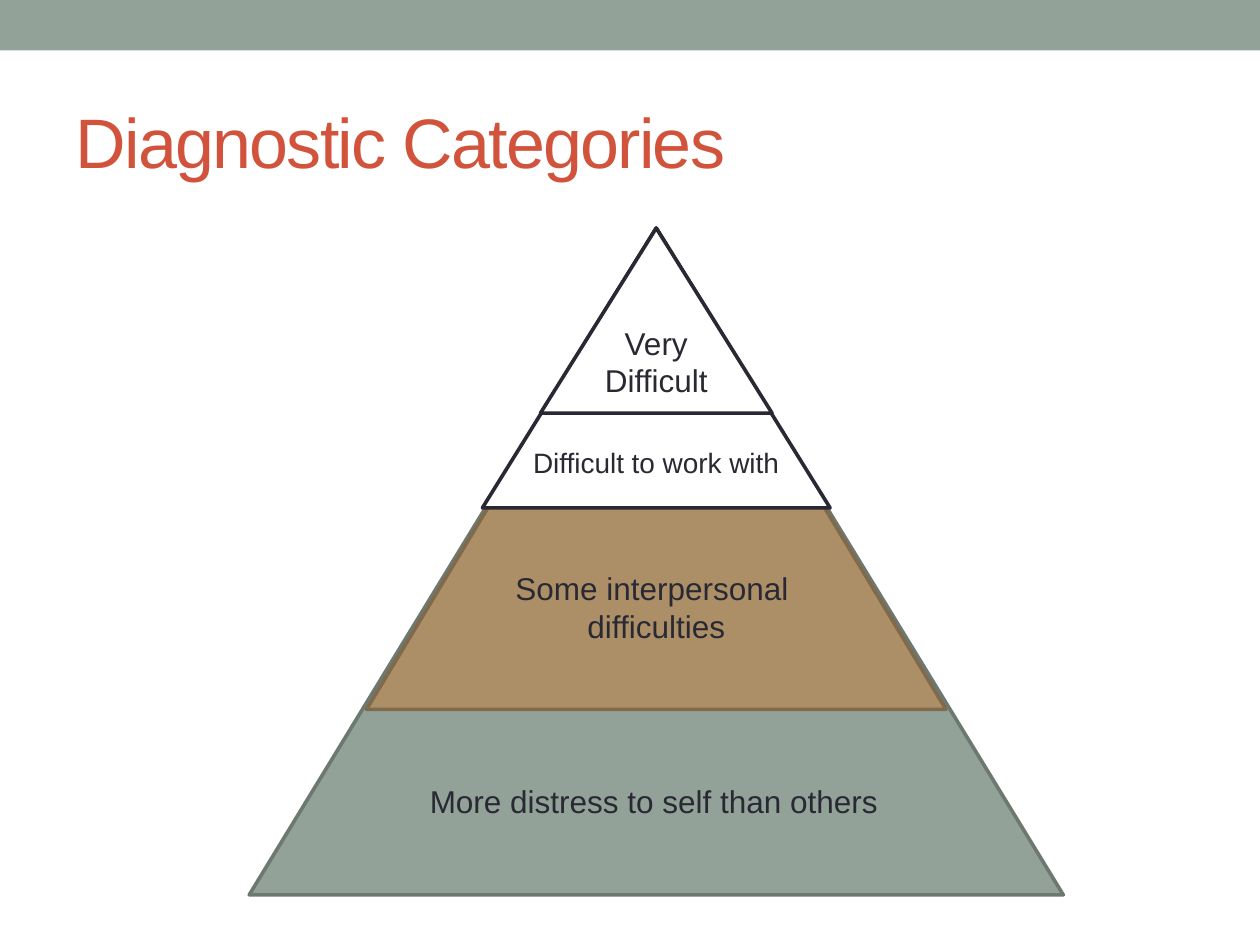
from dataclasses import dataclass

from pptx import Presentation
from pptx.dml.color import RGBColor
from pptx.enum.shapes import MSO_SHAPE as Kind
from pptx.enum.text import MSO_ANCHOR as Anchor, MSO_AUTO_SIZE as Fit, PP_ALIGN as Align
from pptx.util import Cm, Pt

INK, SAGE, TAN, WHITE, RED = "292934", "93A299", "AD8F67", "FFFFFF", "D2533C"
MID, TOP = 13.23, 4.6


@dataclass
class Tier:
    width: float
    height: float
    fill: str
    edge: str


@dataclass
class Label:
    top: float
    width: float
    height: float
    lines: tuple[str, ...]
    size: int = 18
    align: Align = Align.CENTER


TIERS = [
    Tier(16.41, 13.44, SAGE, "6D7871"),
    Tier(11.68, 9.7, TAN, "806A4C"),
    Tier(7.01, 5.64, WHITE, INK),
    Tier(4.67, 3.73, WHITE, INK),
]
LABELS = [
    Label(15.65, 9.63, 1.02, ("More distress to self than others",), align=Align.LEFT),
    Label(11.35, 6.25, 1.8, ("Some interpersonal ", "difficulties")),
    Label(8.86, 5.54, 0.94, ("Difficult to work with",), 16),
    Label(6.4, 2.59, 1.8, ("Very", "Difficult")),
]


def tint(code: str) -> RGBColor:
    return RGBColor.from_string(code)


def add_run(para, text: str, size: int, color: str):
    run = para.add_run()
    run.text = text
    font = run.font
    font.name, font.size = "Arial", Pt(size)
    font.color.rgb = tint(color)
    return run


def add_bar(slide) -> None:
    bar = slide.shapes.add_shape(Kind.RECTANGLE, 0, 0, Cm(25.4), Cm(1.02))
    bar.shadow.inherit = False
    bar.fill.solid()
    bar.fill.fore_color.rgb = tint(SAGE)
    bar.line.fill.background()


def add_title(slide, text: str) -> None:
    title = slide.shapes.title
    title.left, title.top = Cm(1.27), Cm(1.47)
    title.width, title.height = Cm(22.86), Cm(2.74)
    frame = title.text_frame
    frame.vertical_anchor = Anchor.MIDDLE
    para = frame.paragraphs[0]
    para.alignment = Align.LEFT
    run = add_run(para, text, 40, RED)
    run.font._element.set("spc", "-100")


def add_tier(slide, tier: Tier) -> None:
    shape = slide.shapes.add_shape(
        Kind.ISOSCELES_TRIANGLE,
        Cm(MID - tier.width / 2), Cm(TOP), Cm(tier.width), Cm(tier.height),
    )
    shape.shadow.inherit = False
    shape.fill.solid()
    shape.fill.fore_color.rgb = tint(tier.fill)
    shape.line.color.rgb = tint(tier.edge)
    shape.line.width = Pt(2.08)


def add_label(slide, label: Label) -> None:
    box = slide.shapes.add_textbox(
        Cm(MID - label.width / 2), Cm(label.top), Cm(label.width), Cm(label.height)
    )
    frame = box.text_frame
    frame.word_wrap = False
    frame.auto_size = Fit.SHAPE_TO_FIT_TEXT
    for i, line in enumerate(label.lines):
        para = frame.add_paragraph() if i else frame.paragraphs[0]
        para.alignment = label.align
        add_run(para, line, label.size, INK)


def main() -> None:
    """Build the pyramid of diagnostic categories."""
    deck = Presentation()
    deck.slide_width, deck.slide_height = Cm(25.4), Cm(19.05)
    slide = deck.slides.add_slide(deck.slide_layouts[5])
    add_bar(slide)
    add_title(slide, "Diagnostic Categories")
    for tier in TIERS:
        add_tier(slide, tier)
    for label in LABELS:
        add_label(slide, label)
    deck.save("out.pptx")


if __name__ == "__main__":
    main()
